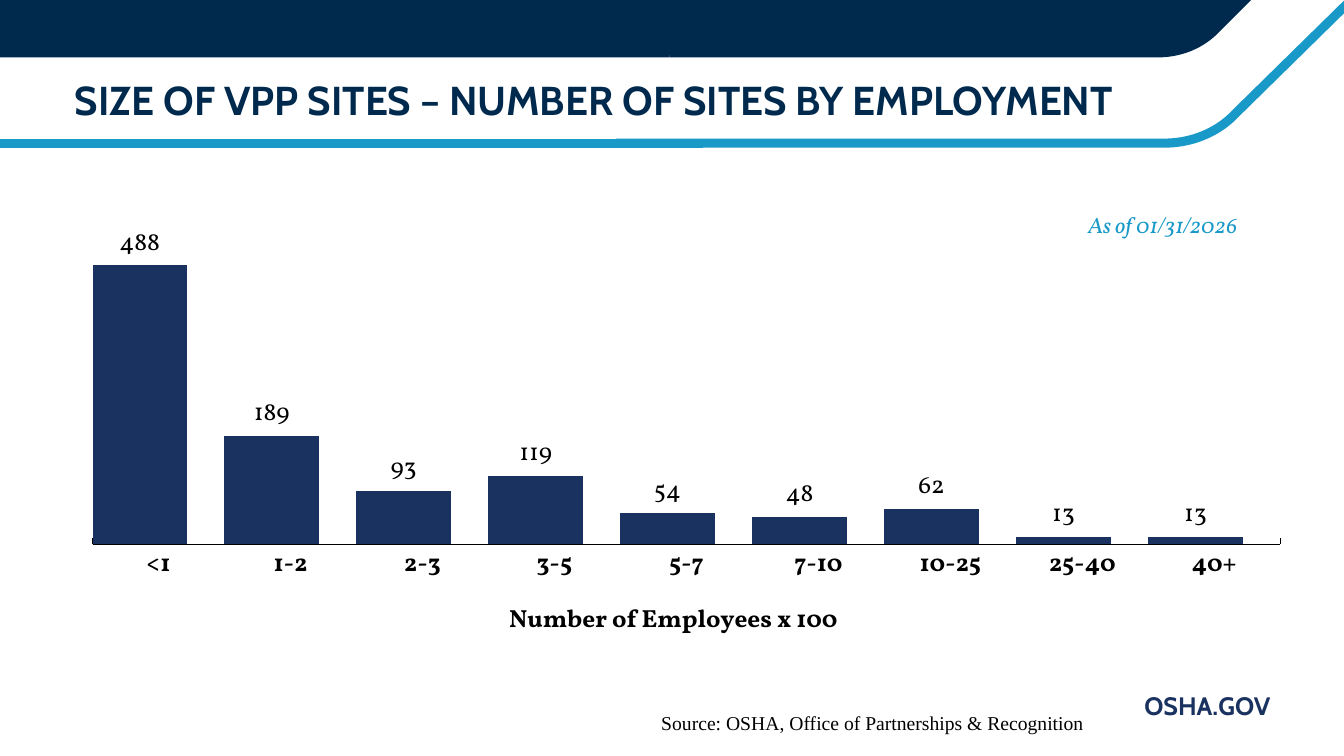
from dataclasses import dataclass

from lxml import etree
from pptx import Presentation
from pptx.chart.data import CategoryChartData
from pptx.dml.color import RGBColor
from pptx.enum.chart import XL_CHART_TYPE, XL_LABEL_POSITION, XL_TICK_LABEL_POSITION, XL_TICK_MARK
from pptx.enum.shapes import MSO_CONNECTOR, MSO_SHAPE
from pptx.enum.text import MSO_ANCHOR, MSO_AUTO_SIZE, PP_ALIGN
from pptx.oxml.ns import qn
from pptx.util import Inches, Pt

COLUMNS = XL_CHART_TYPE.COLUMN_CLUSTERED
ABOVE_BAR = XL_LABEL_POSITION.OUTSIDE_END
NO_LABELS = XL_TICK_LABEL_POSITION.NONE
TICK_IN, TICK_NONE = XL_TICK_MARK.INSIDE, XL_TICK_MARK.NONE
STRAIGHT, RECTANGLE = MSO_CONNECTOR.STRAIGHT, MSO_SHAPE.RECTANGLE
TOP, MIDDLE = MSO_ANCHOR.TOP, MSO_ANCHOR.MIDDLE
LEFT, CENTER, RIGHT = PP_ALIGN.LEFT, PP_ALIGN.CENTER, PP_ALIGN.RIGHT
FIXED_SIZE = MSO_AUTO_SIZE.NONE


@dataclass(frozen=True)
class Theme:
    """Colours, fonts and type sizes of the slide."""
    navy: RGBColor = RGBColor(0x00, 0x29, 0x4E)
    indigo: RGBColor = RGBColor(0x1A, 0x32, 0x60)
    sky: RGBColor = RGBColor(0x19, 0x99, 0xC8)
    steel: RGBColor = RGBColor(0x45, 0x90, 0xB8)
    aqua: RGBColor = RGBColor(0x45, 0xCB, 0xE8)
    black: RGBColor = RGBColor(0, 0, 0)
    heading: str = "Cabin"
    body: str = "Vollkorn"
    credit: str = "Times New Roman"
    title_size: float = 28.8
    chart_size: float = 18.1
    site_size: float = 18
    date_size: float = 16
    credit_size: float = 14


THEME = Theme()
SITES_BY_EMPLOYMENT = {
    "<1": 488, "1-2": 189, "2-3": 93, "3-5": 119, "5-7": 54,
    "7-10": 48, "10-25": 62, "25-40": 13, "40+": 13,
}


def style_font(font, name, size, color, bold=False, italic=False):
    """Apply a typeface, size, colour and weight to a font."""
    font.name, font.size = name, Pt(size)
    font.bold, font.italic = bold, italic
    font.color.rgb = color


def write_text(frame, text, align, anchor, **style):
    """Write one styled run into a text frame."""
    frame.word_wrap = True
    frame.auto_size = FIXED_SIZE
    frame.vertical_anchor = anchor
    paragraph = frame.paragraphs[0]
    paragraph.alignment = align
    run = paragraph.add_run()
    run.text = text
    style_font(run.font, **style)


def add_note(slide, box, text, align, anchor=TOP, **style):
    """Place a text box in the given box."""
    note = slide.shapes.add_textbox(*map(Inches, box))
    write_text(note.text_frame, text, align, anchor, **style)


def curve(p0, p1, p2, p3, steps=24):
    """Return points along a cubic curve."""
    return [
        tuple((1 - t) ** 3 * a + 3 * (1 - t) ** 2 * t * b + 3 * (1 - t) * t ** 2 * c + t ** 3 * d
              for a, b, c, d in zip(p0, p1, p2, p3))
        for t in (step / steps for step in range(steps + 1))
    ]


def add_outline(slide, box, points, close):
    """Draw a freeform whose points are relative to the box."""
    left, top = box[:2]
    corners = [(Inches(left + x), Inches(top + y)) for x, y in points]
    builder = slide.shapes.build_freeform(*corners[0], scale=1.0)
    builder.add_line_segments(corners[1:], close=close)
    return builder.convert_to_shape()


def add_rule(slide, start, end, y, weight):
    """Draw a horizontal sky-blue line."""
    rule = slide.shapes.add_connector(STRAIGHT, *map(Inches, (start, y, end, y)))
    rule.line.color.rgb = THEME.sky
    rule.line.width = Pt(weight)
    etree.SubElement(rule.element.spPr, qn("a:effectLst"))


def add_header(slide, box):
    """Draw the navy band, the sweeping line and the title."""
    left, top, width, height = box
    sweep_start, band_split, band_bottom = 6.11, 6.64, 0.57
    bend = curve((12.25, 1.13), (12.07, 1.32), (11.81, height), (11.55, height))
    sweep = add_outline(slide, box, [(width + 0.07, 0), *bend, (sweep_start, height)], False)
    sweep.shadow.inherit = False
    sweep.fill.background()
    sweep.line.color.rgb = THEME.sky
    sweep.line.width = Pt(6.5)
    add_rule(slide, left, left + sweep_start, top + height, 6.5)

    band_edge = curve((11.48, band_bottom), (11.72, band_bottom), (11.94, 0.48), (12.1, 0.31))
    band_end = add_outline(
        slide, box, [(band_split, 0), (band_split, band_bottom), *band_edge, (12.41, 0)], True)
    band_start, band_joint = (
        slide.shapes.add_shape(RECTANGLE, *map(Inches, (left + x, top, length, depth)))
        for x, length, depth in ((0, band_split, band_bottom), (6.36, 0.54, 0.55)))
    for part in (band_end, band_start, band_joint):
        part.shadow.inherit = False
        part.fill.solid()
        part.fill.fore_color.rgb = THEME.navy
        part.line.fill.background()
    add_rule(slide, left + 5.25, left + 6.97, top + height + 0.01, 5.5)

    title = slide.shapes.title
    title.left, title.top = Inches(left + 0.64), Inches(top + 0.71)
    title.width, title.height = Inches(10.9), Inches(0.56)
    write_text(title.text_frame, "SIZE OF VPP SITES – NUMBER OF SITES BY EMPLOYMENT", LEFT, MIDDLE,
               name=THEME.heading, size=THEME.title_size, color=THEME.navy, bold=True)


def set_layout(parent, successor_tags, **settings):
    """Give a chart part a manual layout in fractions of the chart."""
    for existing in parent.findall(qn("c:layout")):
        parent.remove(existing)
    layout = etree.Element(qn("c:layout"))
    manual = etree.SubElement(layout, qn("c:manualLayout"))
    for tag, value in settings.items():
        etree.SubElement(manual, qn(f"c:{tag}")).set("val", str(value))
    successors = [child for child in parent if child.tag in map(qn, successor_tags)]
    successors[0].addprevious(layout)


def add_employment_chart(slide, box):
    """Chart the number of sites in each employment band."""
    data = CategoryChartData()
    data.categories = list(SITES_BY_EMPLOYMENT)
    empty = [None] * len(SITES_BY_EMPLOYMENT)
    for number, values in enumerate((SITES_BY_EMPLOYMENT.values(), empty, empty), 1):
        data.add_series(f"Series {number}", values)
    chart = slide.shapes.add_chart(COLUMNS, *map(Inches, box), data).chart
    chart.has_legend = chart.has_title = False
    text_style = dict(name=THEME.body, size=THEME.chart_size, color=THEME.black)
    style_font(chart.font, bold=True, **text_style)

    plot = chart.plots[0]
    plot.gap_width, plot.overlap = 0, 80
    plot.vary_by_categories = False
    for series, color in zip(plot.series, (THEME.indigo, THEME.steel, THEME.aqua)):
        series.format.fill.solid()
        series.format.fill.fore_color.rgb = color
        series.invert_if_negative = False
    site_counts = plot.series[0].data_labels
    site_counts.show_value = True
    site_counts.position = ABOVE_BAR
    style_font(site_counts.font, **text_style)

    bands = chart.category_axis
    bands.major_tick_mark, bands.minor_tick_mark = TICK_IN, TICK_NONE
    bands.format.line.color.rgb = THEME.black
    bands.format.line.width = Pt(0.25)
    style_font(bands.tick_labels.font, bold=True, **text_style)
    caption = bands.axis_title.text_frame.paragraphs[0].add_run()
    caption.text = "Number of Employees x 100"
    style_font(caption.font, bold=True, **text_style)
    set_layout(bands.axis_title._element, ("c:overlay", "c:spPr", "c:txPr"),
               xMode="edge", yMode="edge", x=0.362, y=0.914)

    counts = chart.value_axis
    counts.minimum_scale, counts.maximum_scale = 0, 600
    counts.has_major_gridlines = False
    counts.major_tick_mark = counts.minor_tick_mark = TICK_NONE
    counts.tick_label_position = NO_LABELS
    counts.format.line.fill.background()
    set_layout(chart._chartSpace.chart.plotArea, ("c:barChart",), layoutTarget="inner",
               xMode="edge", yMode="edge", x=0.023, y=0.05, w=0.977, h=0.75)


def add_footer(slide, box):
    """Place the site address and the source line."""
    left, top = box[:2]
    add_note(slide, (left, top + 0.2, 5.12, 0.33),
             "Source: OSHA, Office of Partnerships & Recognition", LEFT,
             name=THEME.credit, size=THEME.credit_size, color=THEME.black)
    add_note(slide, (left - 0.43, top, 6.67, 0.4), "OSHA.GOV", RIGHT,
             name=THEME.heading, size=THEME.site_size, color=THEME.indigo, bold=True)


def main():
    """Build and save the slide."""
    deck = Presentation()
    deck.slide_width, deck.slide_height = Inches(13.33), Inches(7.5)
    slide = deck.slides.add_slide(deck.slide_layouts[5])
    add_header(slide, (0, 0, 13.33, 1.42))
    add_employment_chart(slide, (0.64, 1.77, 12.06, 4.64))
    add_note(slide, (10.12, 1.85, 2.83, 0.75), "As of 01/31/2026", CENTER, MIDDLE,
             name=THEME.body, size=THEME.date_size, color=THEME.sky, italic=True)
    add_footer(slide, (6.46, 6.8, 6.24, 0.53))
    deck.save("out.pptx")


if __name__ == "__main__":
    main()
